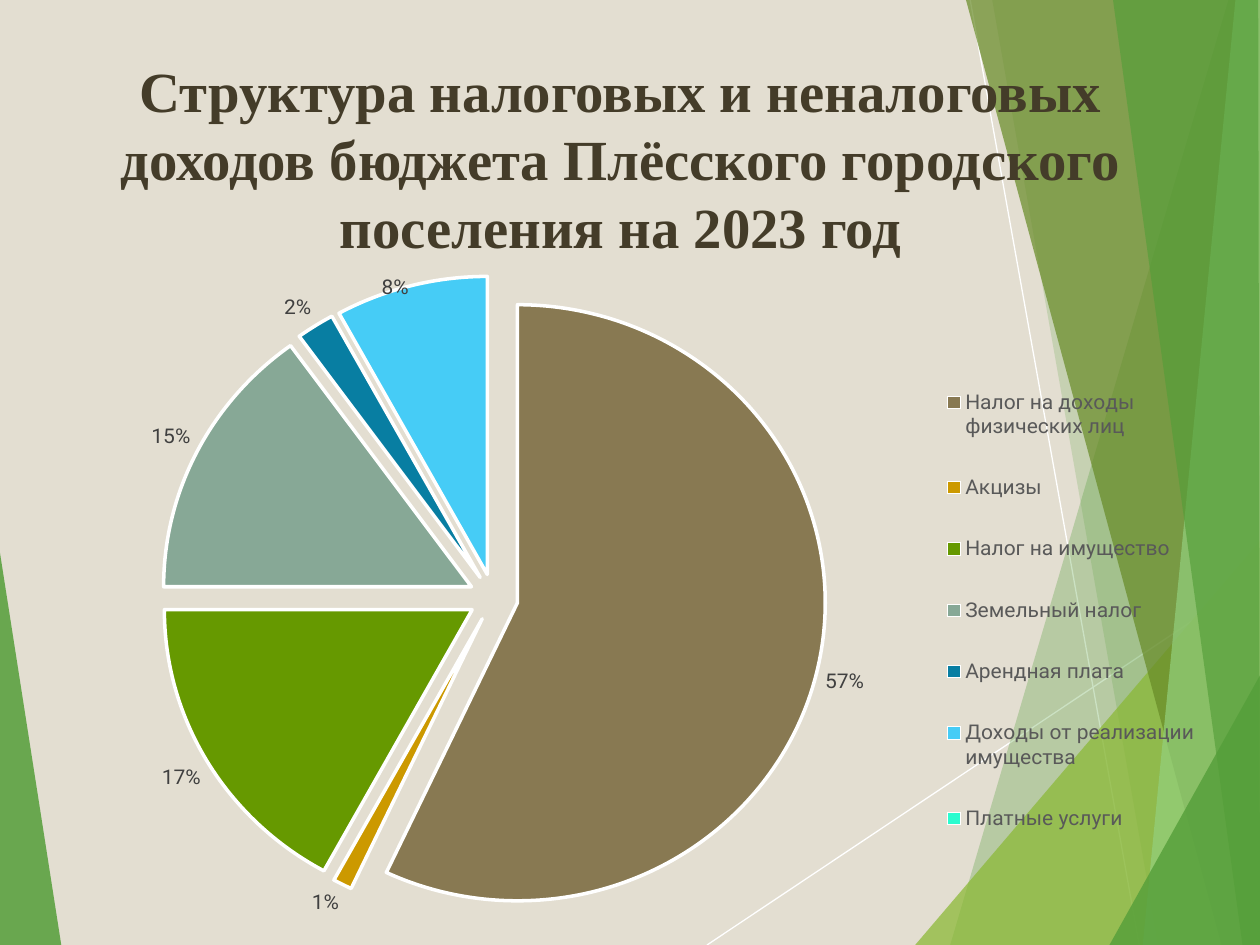
from lxml import etree
from pptx import Presentation
from pptx.chart.data import CategoryChartData
from pptx.dml.color import RGBColor
from pptx.enum.chart import XL_CHART_TYPE, XL_LABEL_POSITION, XL_LEGEND_POSITION
from pptx.enum.shapes import MSO_CONNECTOR
from pptx.enum.text import MSO_ANCHOR, PP_ALIGN
from pptx.oxml import parse_xml
from pptx.oxml.ns import nsdecls, qn
from pptx.util import Pt

PIE = XL_CHART_TYPE.PIE
OUTSIDE = XL_LABEL_POSITION.OUTSIDE_END
RIGHT = XL_LEGEND_POSITION.RIGHT
STRAIGHT = MSO_CONNECTOR.STRAIGHT
BOTTOM = MSO_ANCHOR.BOTTOM
CENTER = PP_ALIGN.CENTER

WIDTH, HEIGHT = 720, 540
TITLE_FONT, CHART_FONT = "Times New Roman", "Roboto"

BEIGE = RGBColor(0xE3, 0xDE, 0xD1)
WHITE = RGBColor(0xFF, 0xFF, 0xFF)
BROWN = RGBColor(0x44, 0x3C, 0x29)
GREEN = RGBColor(0x54, 0x9E, 0x39)
LIME = RGBColor(0x8A, 0xB8, 0x33)
OLIVE = RGBColor(0x67, 0x8A, 0x26)
MINT = RGBColor(0x93, 0xD0, 0x7D)
LABEL_GREY = RGBColor(0x40, 0x40, 0x40)
LEGEND_GREY = RGBColor(0x59, 0x59, 0x59)

RAYS = [((404, 540), (720, 329)), ((554.4, 0), (651, 540))]

FACETS = [
    ([(0, 316), (35.3, 540), (0, 540)], GREEN, 85),
    ([(702, 0), (543, 540), (720, 540), (720, 0)], GREEN, 30),
    ([(567.4, 0), (661.7, 540), (720, 540), (720, 0)], GREEN, 20),
    ([(522.7, 540), (720, 309), (720, 540)], LIME, 72),
    ([(552.2, 0), (698.4, 540), (720, 540), (720, 0)], OLIVE, 70),
    ([(706.3, 0), (653, 540), (720, 540), (720, 0)], MINT, 70),
    ([(636, 0), (710, 540), (720, 540), (718.6, 0)], GREEN, 65),
    ([(634.5, 540), (720, 385.5), (720, 540)], GREEN, 80),
]

TITLE = ("Структура налоговых и неналоговых доходов бюджета "
         "Плёсского городского поселения на 2023 год")

INCOME = [
    ("Налог на доходы физических лиц", 57, RGBColor(0x88, 0x79, 0x52)),
    ("Акцизы", 1, RGBColor(0xCC, 0x99, 0x00)),
    ("Налог на имущество", 17, RGBColor(0x66, 0x99, 0x00)),
    ("Земельный налог", 15, RGBColor(0x87, 0xA8, 0x96)),
    ("Арендная плата", 2, RGBColor(0x08, 0x7E, 0xA2)),
    ("Доходы от реализации имущества", 8, RGBColor(0x46, 0xCC, 0xF6)),
    ("Платные услуги", 0, RGBColor(0x2B, 0xFC, 0xCF)),
]


def add_ray(s, start, end):
    """Draw a thin white background line."""
    line = s.shapes.add_connector(STRAIGHT, *map(Pt, start + end))
    line.line.color.rgb = WHITE
    line.line.width = Pt(0.75)
    etree.SubElement(line._element.spPr, qn("a:effectLst"))


def add_facet(s, points, color, opacity):
    """Draw a translucent polygon; opacity is in percent."""
    builder = s.shapes.build_freeform(*points[0], scale=Pt(1))
    builder.add_line_segments(points[1:], close=True)
    sp = builder.convert_to_shape()
    sp.shadow.inherit = False
    sp.line.fill.background()
    sp.fill.solid()
    sp.fill.fore_color.rgb = color
    srgb = sp._element.spPr.find(".//" + qn("a:srgbClr"))
    etree.SubElement(srgb, qn("a:alpha"), val=str(opacity * 1000))


def style_font(font, size, color, name=CHART_FONT):
    """Set size, colour and typeface."""
    font.size = Pt(size)
    font.color.rgb = color
    font.name = name


def add_title(s):
    """Add the centred bold title."""
    sp = s.shapes.add_textbox(Pt(48), Pt(26), Pt(613), Pt(126))
    tf = sp.text_frame
    tf.word_wrap = True
    tf.vertical_anchor = BOTTOM
    p = tf.paragraphs[0]
    p.alignment = CENTER
    r = p.add_run()
    r.text = TITLE
    r.font.bold = True
    style_font(r.font, 32.4, BROWN, TITLE_FONT)


def set_layout(parent, after, x, y, w, h, target=""):
    """Give a chart part a manual layout in fractions of the chart."""
    for old in parent.findall(qn("c:layout")):
        parent.remove(old)
    layout = parse_xml(
        f'<c:layout {nsdecls("c")}><c:manualLayout>{target}'
        '<c:xMode val="edge"/><c:yMode val="edge"/>'
        f'<c:x val="{x}"/><c:y val="{y}"/><c:w val="{w}"/><c:h val="{h}"/>'
        '</c:manualLayout></c:layout>')
    if after is None:
        parent.insert(0, layout)
    else:
        after.addnext(layout)


def add_income_pie(s):
    """Add the exploded pie of budget income."""
    data = CategoryChartData()
    data.categories = [name for name, _, _ in INCOME]
    data.add_series("Series 1", [value for _, value, _ in INCOME])
    chart = s.shapes.add_chart(
        PIE, Pt(48), Pt(145.5), Pt(641), Pt(380), data).chart
    chart.has_title = False
    chart.font.size = Pt(10)
    chart.font.name = CHART_FONT

    plot = chart.plots[0]
    plot.vary_by_categories = True
    series = plot.series[0]
    for i, (_, _, color) in enumerate(INCOME):
        fmt = series.points[i].format
        fmt.fill.solid()
        fmt.fill.fore_color.rgb = color
        fmt.line.color.rgb = WHITE
        fmt.line.width = Pt(2)
    first_point = series._element.find(qn("c:dPt"))
    first_point.addprevious(
        parse_xml(f'<c:explosion {nsdecls("c")} val="8"/>'))

    labels = series.data_labels
    labels.show_percentage = True
    labels.show_value = False
    labels.number_format = "0%"
    labels.number_format_is_linked = False
    labels.position = OUTSIDE
    style_font(labels.font, 12, LABEL_GREY)

    chart.has_legend = True
    legend = chart.legend
    legend.position = RIGHT
    legend.include_in_layout = False
    style_font(legend.font, 12, LEGEND_GREY)
    legend_xml = legend._element
    set_layout(legend_xml, legend_xml.find(qn("c:legendPos")),
               0.76, 0.12, 0.24, 0.8)
    plot_area = chart._chartSpace.find(".//" + qn("c:plotArea"))
    set_layout(plot_area, None, 0, 0, 0.73, 1,
               '<c:layoutTarget val="inner"/>')


def main():
    """Build the slide and save it."""
    prs = Presentation()
    prs.slide_width, prs.slide_height = Pt(WIDTH), Pt(HEIGHT)
    s = prs.slides.add_slide(prs.slide_layouts[6])
    s.background.fill.solid()
    s.background.fill.fore_color.rgb = BEIGE
    for start, end in RAYS:
        add_ray(s, start, end)
    for points, color, opacity in FACETS:
        add_facet(s, points, color, opacity)
    add_title(s)
    add_income_pie(s)
    prs.save("out.pptx")


if __name__ == "__main__":
    main()
